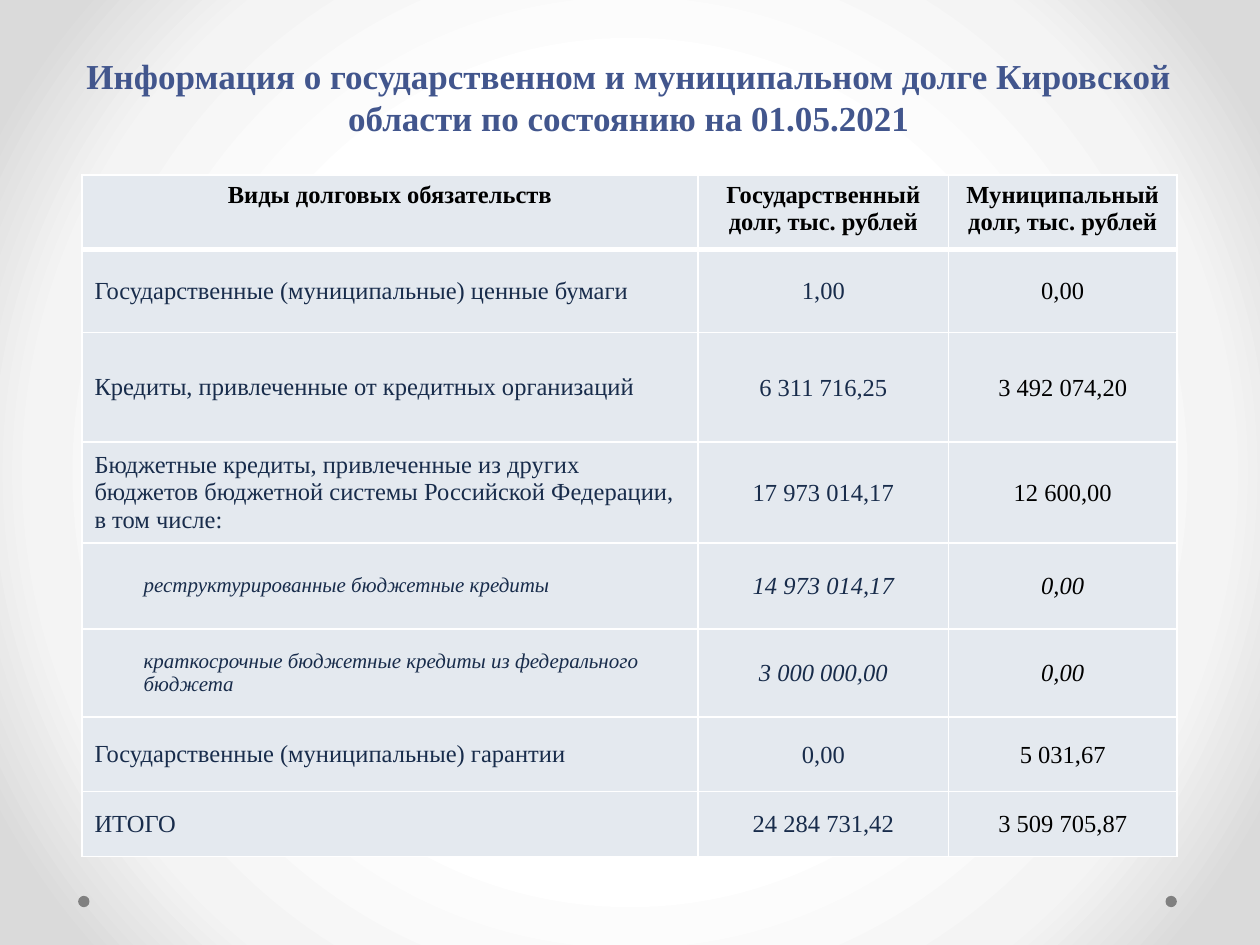
from pptx import Presentation
from pptx.dml.color import RGBColor
from pptx.enum import shapes, text
from pptx.oxml import parse_xml
from pptx.oxml.ns import nsdecls, qn
from pptx.util import Inches, Pt

COLORS = {
    "title": "42568D",
    "body": "182C4B",
    "black": "000000",
    "cell": "E4E9EF",
    "border": "FFFFFF",
    "dot": "808080",
}
BACKGROUND_STOPS = [(50, "FFFFFF"), (76, "F4F4F4"), (92, "DADADA")]
FONT = "Times New Roman"

HEADER = [
    "Виды долговых обязательств",
    "Государственный долг, тыс. рублей",
    "Муниципальный долг, тыс. рублей",
]
DEBTS = [
    ("Государственные (муниципальные) ценные бумаги", "1,00", "0,00"),
    ("Кредиты, привлеченные от кредитных организаций", "6 311 716,25", "3 492 074,20"),
    ("Бюджетные кредиты, привлеченные из других бюджетов бюджетной системы "
     "Российской Федерации, \vв том числе:", "17 973 014,17", "12 600,00"),
    ("реструктурированные бюджетные кредиты", "14 973 014,17", "0,00"),
    ("краткосрочные бюджетные кредиты из федерального бюджета", "3 000 000,00", "0,00"),
    ("Государственные (муниципальные) гарантии", "0,00", "5 031,67"),
    ("ИТОГО", "24 284 731,42", "3 509 705,87"),
]
SUBITEM_ROWS = (4, 5)
COLUMN_WIDTHS = [4.89, 1.99, 1.81]
ROW_HEIGHTS = [0.59, 0.66, 0.87, 0.8, 0.68, 0.7, 0.59, 0.52]


def write(frame, content, size, color, bold=False, italic=False, centered=True):
    frame.text = content
    paragraph = frame.paragraphs[0]
    paragraph.alignment = text.PP_ALIGN.CENTER if centered else text.PP_ALIGN.LEFT
    for run in paragraph.runs:
        run.font.name = FONT
        run.font.size = Pt(size)
        run.font.bold = bold
        run.font.italic = italic
        run.font.color.rgb = RGBColor.from_string(COLORS[color])


def set_borders(cell, bottom_width):
    properties = cell._tc.get_or_add_tcPr()
    widths = {"lnL": 1, "lnR": 1, "lnT": 1, "lnB": bottom_width}
    for position, (side, width) in enumerate(widths.items()):
        properties.insert(position, parse_xml(
            f'<a:{side} {nsdecls("a")} w="{Pt(width)}"><a:solidFill>'
            f'<a:srgbClr val="{COLORS["border"]}"/></a:solidFill></a:{side}>'))


presentation = Presentation()
presentation.slide_width = Inches(10)
presentation.slide_height = Inches(7.5)
slide = presentation.slides.add_slide(presentation.slide_layouts[6])

# Radial background
slide.background.fill.solid()
background = slide.element.find(".//" + qn("p:bgPr"))
stops = "".join(f'<a:gs pos="{position * 1000}"><a:srgbClr val="{color}"/></a:gs>'
                for position, color in BACKGROUND_STOPS)
background.replace(background[0], parse_xml(
    f'<a:gradFill {nsdecls("a")} rotWithShape="1"><a:gsLst>{stops}</a:gsLst>'
    '<a:path path="circle"><a:fillToRect l="50000" t="50000" r="50000" b="50000"/>'
    '</a:path></a:gradFill>'))

# Corner dots
for left in (9.25, 0.62):
    dot = slide.shapes.add_shape(shapes.MSO_SHAPE.OVAL, Inches(left), Inches(7.11),
                                 Inches(0.09), Inches(0.09))
    dot.shadow.inherit = False
    dot.fill.solid()
    dot.fill.fore_color.rgb = RGBColor.from_string(COLORS["dot"])
    dot.line.fill.background()

# Title
title = slide.shapes.add_textbox(Inches(0.57), Inches(0.21), Inches(8.84), Inches(0.94))
title.text_frame.word_wrap = True
title.text_frame.vertical_anchor = text.MSO_ANCHOR.BOTTOM
write(title.text_frame,
      "Информация о государственном и муниципальном долге Кировской области "
      "по состоянию на 01.05.2021", 20, "title", bold=True)

# Debt table
rows = [HEADER, *DEBTS]
table = slide.shapes.add_table(
    len(rows), len(HEADER), Inches(0.65), Inches(1.39),
    Inches(sum(COLUMN_WIDTHS)), Inches(sum(ROW_HEIGHTS))).table
for column, width in zip(table.columns, COLUMN_WIDTHS):
    column.width = Inches(width)
for row, height in zip(table.rows, ROW_HEIGHTS):
    row.height = Inches(height)

for row_index, values in enumerate(rows):
    is_header = row_index == 0
    is_subitem = row_index in SUBITEM_ROWS
    for column_index, value in enumerate(values):
        cell = table.cell(row_index, column_index)
        is_label = column_index == 0
        write(cell.text_frame, value,
              size=12 if is_subitem and is_label else 14,
              color="black" if is_header or column_index == 2 else "body",
              bold=is_header, italic=is_subitem,
              centered=is_header or not is_label)
        cell.fill.solid()
        cell.fill.fore_color.rgb = RGBColor.from_string(COLORS["cell"])
        set_borders(cell, bottom_width=3 if is_header else 1)
        if is_header:
            continue
        cell.vertical_anchor = text.MSO_ANCHOR.MIDDLE
        if not is_label:
            cell.margin_left = cell.margin_right = cell.margin_top = Inches(0.01)
            cell.margin_bottom = 0
        elif is_subitem:
            indent = cell.text_frame.paragraphs[0]._p.get_or_add_pPr()
            indent.set("marL", str(Inches(0.39)))

presentation.save("out.pptx")
